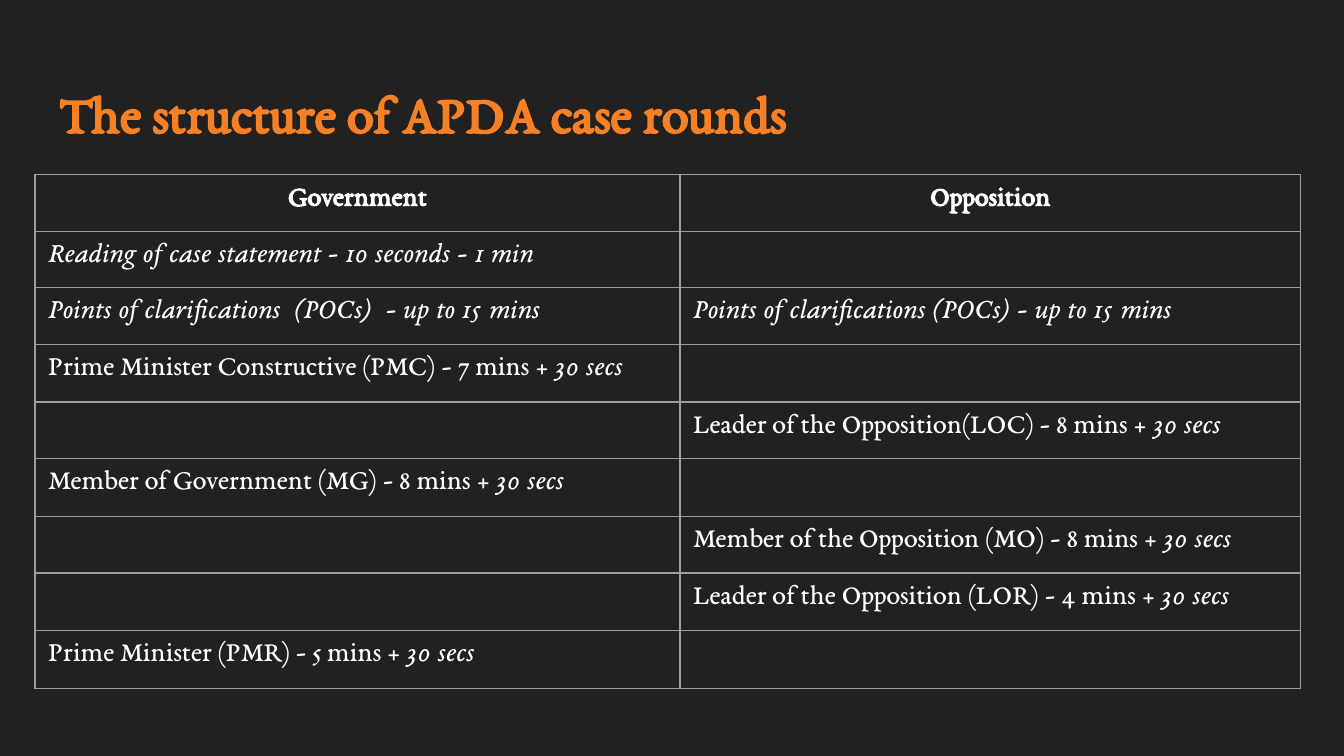
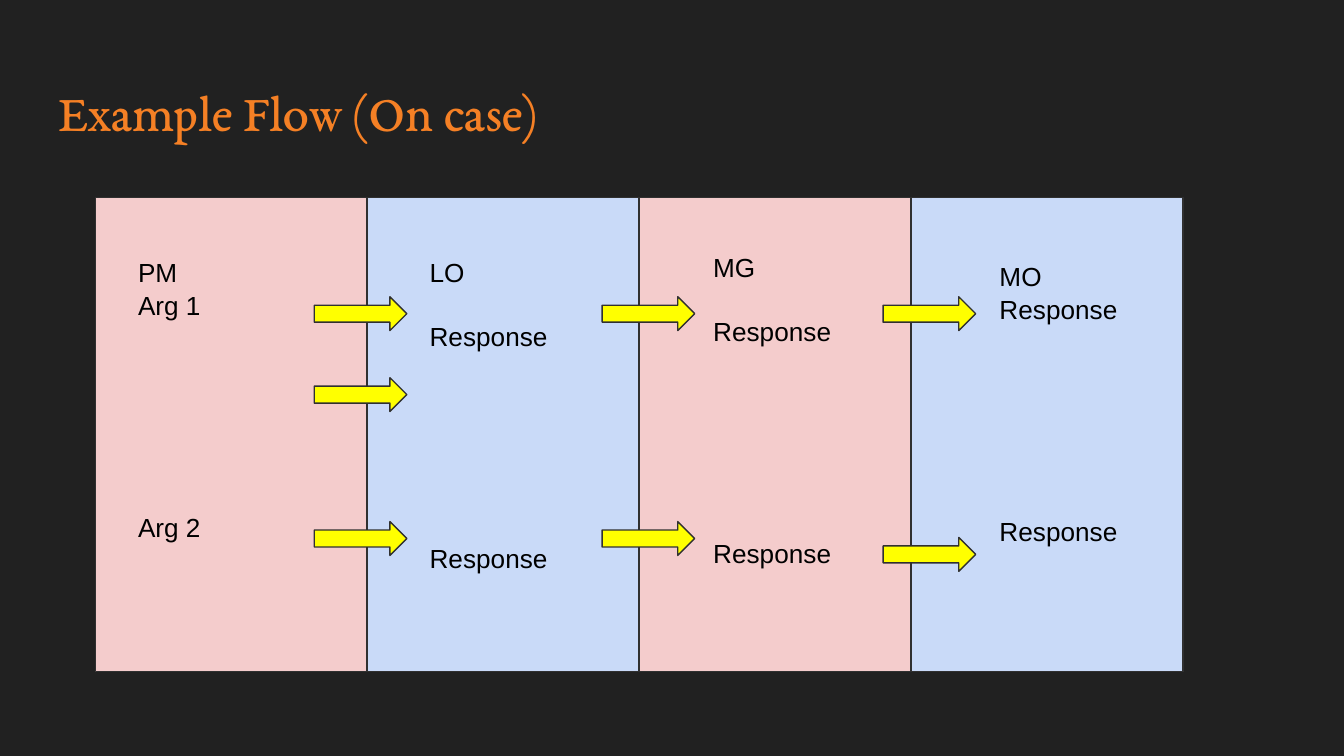
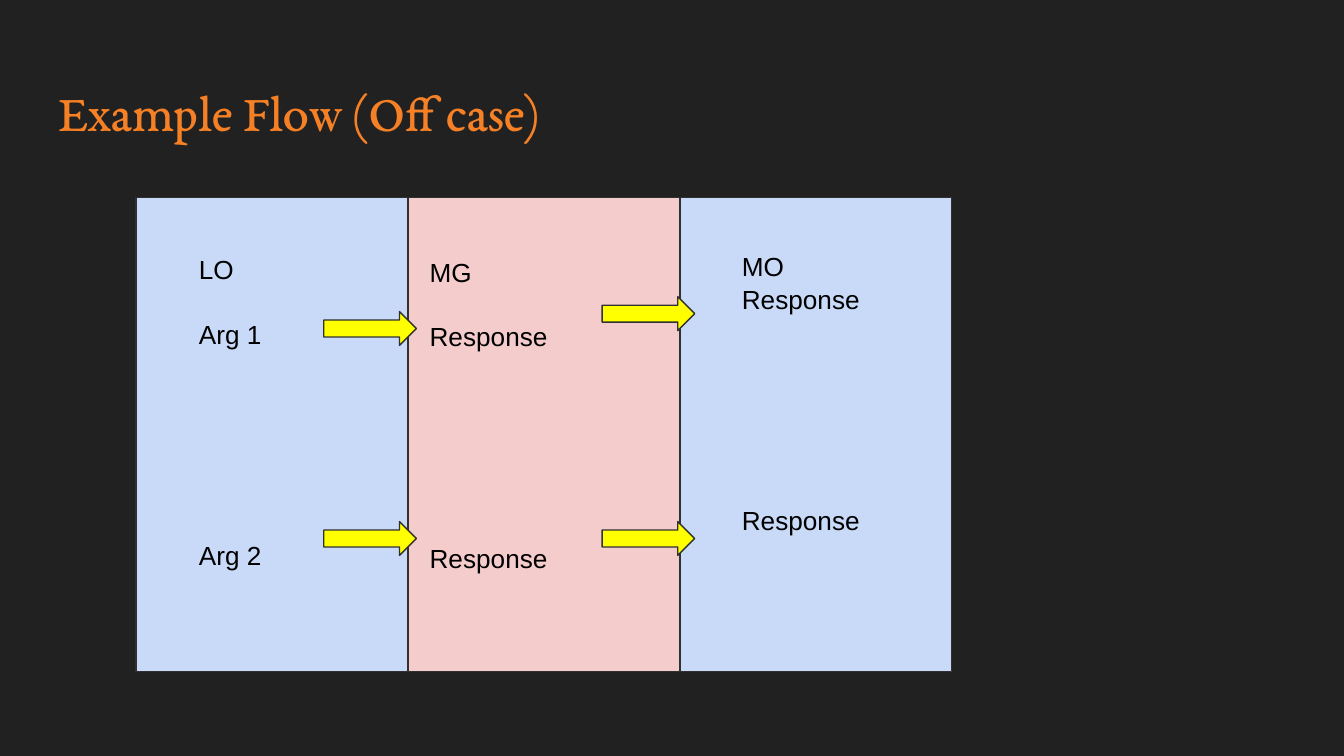
from lxml import etree
from pptx import Presentation
from pptx.dml.color import RGBColor
from pptx.enum.shapes import MSO_SHAPE
from pptx.enum.text import MSO_ANCHOR, MSO_AUTO_SIZE, PP_ALIGN
from pptx.oxml.ns import qn
from pptx.util import Cm, Pt

RECTANGLE = MSO_SHAPE.RECTANGLE
RIGHT_ARROW = MSO_SHAPE.RIGHT_ARROW
TOP = MSO_ANCHOR.TOP
NO_AUTOFIT = MSO_AUTO_SIZE.NONE
LEFT, CENTER = PP_ALIGN.LEFT, PP_ALIGN.CENTER
TITLE_ONLY = 5

BACKGROUND = "212121"
ORANGE = "F58025"
WHITE = "FFFFFF"
BLACK = "000000"
GRID = "9E9E9E"
OUTLINE = "303030"
GOVERNMENT = "F4CCCC"
OPPOSITION = "C9DAF8"
YELLOW = "FFFF00"

SERIF, SANS = "EB Garamond", "Arial"
INSET = Cm(0.25)
BAND_TOP, BAND_WIDTH, BAND_HEIGHT = 3.73, 5.14, 8.97
NOTE_SIZE, NOTE_SPACING, NOTE_LINE = 14, 1.05, 16.85
GRACE = "+ 30 secs"

ROUND_COLUMNS = (12.19, 11.73)
ROUND_HEIGHTS = (1.07, 1.07, 1.07, 1.09, 1.07, 1.09, 1.07, 1.09, 1.09)
ROUND_ROWS = (
    ("Government", "Opposition"),
    ("Reading of case statement - 10 seconds - 1 min", ""),
    ("Points of clarifications  (POCs)  - up to 15 mins",
     "Points of clarifications (POCs) - up to 15 mins"),
    ("Prime Minister Constructive (PMC) - 7 mins ", ""),
    ("", "Leader of the Opposition(LOC) - 8 mins "),
    ("Member of Government (MG) - 8 mins ", ""),
    ("", "Member of the Opposition (MO) - 8 mins "),
    ("", "Leader of the Opposition (LOR) - 4 mins "),
    ("Prime Minister (PMR) - 5 mins ", ""),
)
FIRST_SPEECH = 3

ON_CASE_NOTES = (
    (2.36, 4.57, 7.82, ((0, "PM"), (0, "Arg 1"), (6, "Arg 2"))),
    (7.87, 4.57, 7.52, ((0, "LO"), (1, "Response"), (6, "Response"))),
    (13.23, 4.47, 7.65, ((0, "MG"), (1, "Response"), (6, "Response"))),
    (18.64, 4.65, 7.52, ((0, "MO"), (0, "Response"), (6, "Response"))),
)
ON_CASE_ARROWS = ((5.94, (5.61, 7.14, 9.86)), (11.38, (5.61, 9.86)), (16.69, (5.61, 10.16)))

OFF_CASE_NOTES = (
    (3.51, 4.52, 7.65, ((0, "LO"), (1, "Arg 1"), (6, "Arg 2"))),
    (7.87, 4.57, 7.52, ((0, "MG"), (1, "Response"), (6, "Response"))),
    (13.77, 4.45, 7.52, ((0, "MO"), (0, "Response"), (6, "Response"))),
)
OFF_CASE_ARROWS = ((6.12, (5.89, 9.86)), (11.38, (5.61, 9.86)))


def colour(value):
    return RGBColor.from_string(value)


def add_run(paragraph, text, font, size, ink, bold=False, italic=False):
    run = paragraph.add_run()
    run.text = text
    run.font.name = font
    run.font.size = Pt(size)
    run.font.color.rgb = colour(ink)
    run.font.bold = bold
    run.font.italic = italic


def set_insets(frame):
    frame.margin_left = frame.margin_right = INSET
    frame.margin_top = frame.margin_bottom = INSET


def add_titled_slide(deck, heading, size=28, bold=False):
    slide = deck.slides.add_slide(deck.slide_layouts[TITLE_ONLY])
    title = slide.shapes.title
    title.left, title.top = Cm(0.86), Cm(1.24)
    title.width, title.height = Cm(23.67), Cm(1.6)
    frame = title.text_frame
    frame.auto_size = NO_AUTOFIT
    frame.vertical_anchor = TOP
    set_insets(frame)
    paragraph = frame.paragraphs[0]
    paragraph.alignment = LEFT
    add_run(paragraph, heading, SERIF, size, ORANGE, bold)
    return slide


def add_borders(cell):
    properties = cell._tc.get_or_add_tcPr()
    for position, side in enumerate(("a:lnL", "a:lnR", "a:lnT", "a:lnB")):
        border = etree.Element(qn(side), w=str(Pt(0.75)))
        fill = etree.SubElement(border, qn("a:solidFill"))
        etree.SubElement(fill, qn("a:srgbClr"), val=GRID)
        properties.insert(position, border)


def fill_round_cell(cell, text, row):
    cell.fill.background()
    add_borders(cell)
    set_insets(cell)
    paragraph = cell.text_frame.paragraphs[0]
    paragraph.line_spacing = 0.8
    if not text:
        cell.margin_top = cell.margin_bottom = 0
        return
    header = row == 0
    speech = row >= FIRST_SPEECH
    paragraph.alignment = CENTER if header else LEFT
    add_run(paragraph, text, SERIF, 15, WHITE, header, not header and not speech)
    if speech:
        add_run(paragraph, GRACE, SERIF, 15, WHITE, italic=True)


def add_rounds_table(slide):
    rounds = slide.shapes.add_table(
        len(ROUND_ROWS), len(ROUND_COLUMNS), Cm(0.66), Cm(3.3),
        Cm(sum(ROUND_COLUMNS)), Cm(sum(ROUND_HEIGHTS))).table
    rounds.first_row = rounds.horz_banding = False
    for column, width in zip(rounds.columns, ROUND_COLUMNS):
        column.width = Cm(width)
    for row, (height, texts) in enumerate(zip(ROUND_HEIGHTS, ROUND_ROWS)):
        rounds.rows[row].height = Cm(height)
        for column, text in enumerate(texts):
            fill_round_cell(rounds.cell(row, column), text, row)


def add_block(slide, kind, left, top, width, height, fill):
    block = slide.shapes.add_shape(kind, Cm(left), Cm(top), Cm(width), Cm(height))
    block.shadow.inherit = False
    block.fill.solid()
    block.fill.fore_color.rgb = colour(fill)
    block.line.color.rgb = colour(OUTLINE)
    block.line.width = Pt(0.75)


def add_notes(slide, left, top, height, entries):
    frame = slide.shapes.add_textbox(Cm(left), Cm(top), Cm(3.3), Cm(height)).text_frame
    frame.word_wrap = True
    set_insets(frame)
    for index, (skipped_lines, text) in enumerate(entries):
        paragraph = frame.add_paragraph() if index else frame.paragraphs[0]
        paragraph.line_spacing = NOTE_SPACING
        paragraph.space_before = Pt(skipped_lines * NOTE_LINE)
        add_run(paragraph, text, SANS, NOTE_SIZE, BLACK)


def add_flow(slide, left, sides, arrows, notes):
    for index, side in enumerate(sides):
        add_block(slide, RECTANGLE, left + index * BAND_WIDTH, BAND_TOP,
                  BAND_WIDTH, BAND_HEIGHT, side)
    for arrow_left, tops in arrows:
        for top in tops:
            add_block(slide, RIGHT_ARROW, arrow_left, top, 1.75, 0.64, YELLOW)
    for note in notes:
        add_notes(slide, *note)


def main():
    deck = Presentation()
    deck.slide_width, deck.slide_height = Cm(25.4), Cm(14.29)
    backdrop = deck.slide_master.background.fill
    backdrop.solid()
    backdrop.fore_color.rgb = colour(BACKGROUND)

    add_rounds_table(add_titled_slide(deck, "The structure of APDA case rounds", 29, True))
    add_flow(add_titled_slide(deck, "Example Flow (On case)"), 1.8,
             (GOVERNMENT, OPPOSITION) * 2, ON_CASE_ARROWS, ON_CASE_NOTES)
    add_flow(add_titled_slide(deck, "Example Flow (Off case)"), 2.57,
             (OPPOSITION, GOVERNMENT, OPPOSITION), OFF_CASE_ARROWS, OFF_CASE_NOTES)
    deck.save("out.pptx")


if __name__ == "__main__":
    main()
